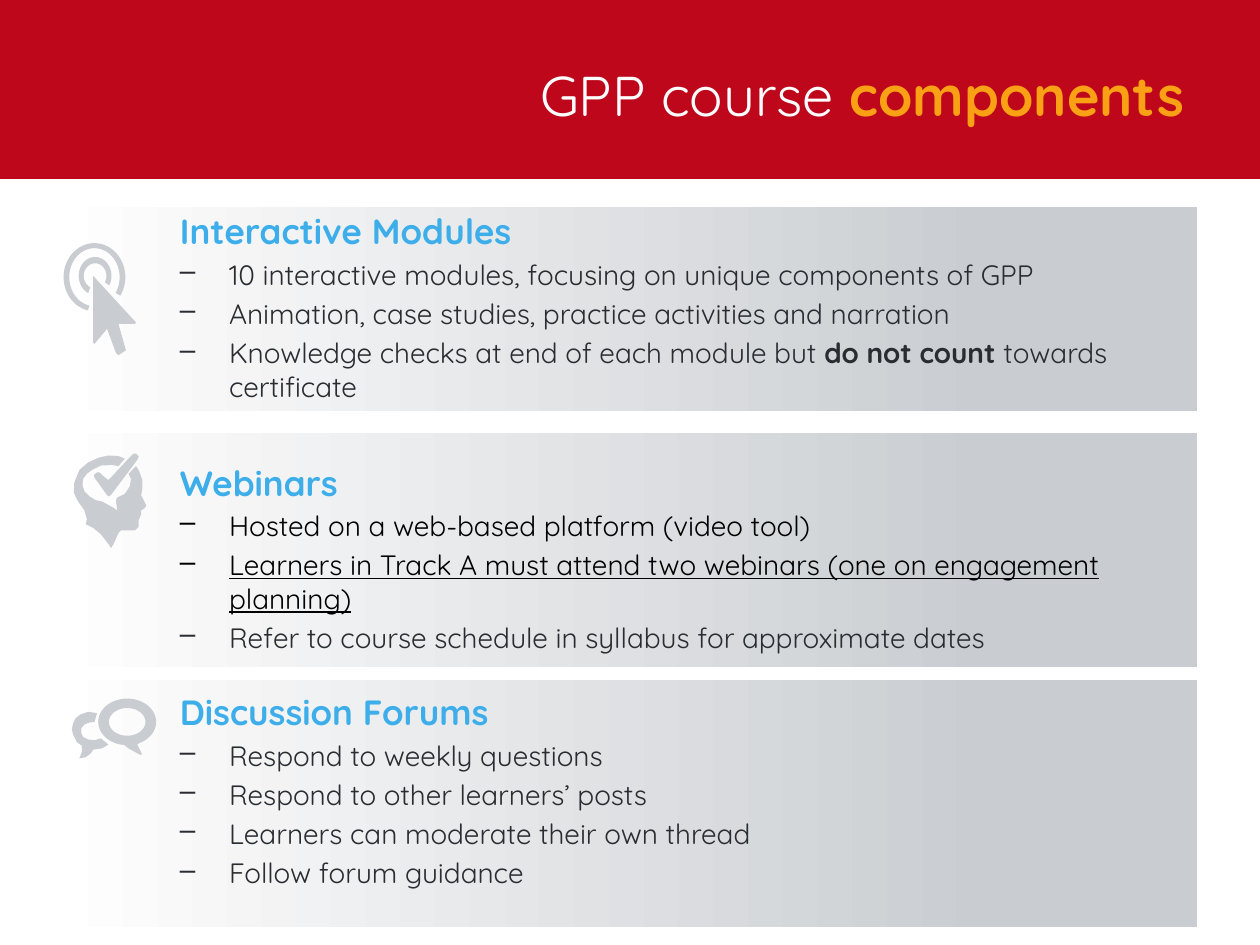
from math import cos, radians, sin

from lxml import etree
from pptx import Presentation
from pptx.dml.color import RGBColor
from pptx.enum.shapes import MSO_SHAPE
from pptx.enum.text import MSO_ANCHOR, PP_ALIGN
from pptx.oxml.ns import qn
from pptx.util import Inches, Pt

RECT = MSO_SHAPE.RECTANGLE
MIDDLE = MSO_ANCHOR.MIDDLE
RIGHT = PP_ALIGN.RIGHT

THEME = {
    "font": "Quicksand",
    "red": RGBColor(0xBF, 0x07, 0x1C),
    "gold": RGBColor(0xFA, 0xA0, 0x14),
    "blue": RGBColor(0x3D, 0xAE, 0xEA),
    "grey": RGBColor(0xC9, 0xCD, 0xD1),
    "ink": RGBColor(0x29, 0x2C, 0x30),
    "black": RGBColor(0, 0, 0),
    "white": RGBColor(255, 255, 255),
    "title": Pt(32),
    "head": Pt(20),
    "body": Pt(16),
}

deck = Presentation()
deck.slide_width, deck.slide_height = Inches(10), Inches(7.5)
UNIT = deck.slide_width // 1000  # the slide is a grid of 1000 columns, 750 rows
slide = deck.slides.add_slide(deck.slide_layouts[5])
shapes = slide.shapes


def arc(mid, radius, start, stop):
    """Points on an ellipse, clockwise from start to stop in degrees."""
    steps = 48
    turns = [radians(start + (stop - start) * i / steps) for i in range(steps + 1)]
    return [(mid[0] + radius[0] * cos(t), mid[1] + radius[1] * sin(t)) for t in turns]


def draw(*loops):
    """One grey outline made of closed loops of grid points."""
    loops = [[(x * UNIT, y * UNIT) for x, y in loop] for loop in loops]
    pen = shapes.build_freeform(*loops[0][0], scale=1.0)
    for i, loop in enumerate(loops):
        if i:
            pen.move_to(*loop[0])
        pen.add_line_segments(loop[1:], close=True)
    icon = pen.convert_to_shape()
    icon.shadow.inherit = False
    icon.fill.solid()
    icon.fill.fore_color.rgb = THEME["grey"]
    icon.line.fill.background()


# Header
band = shapes.add_shape(RECT, 0, 0, deck.slide_width, 142 * UNIT)
band.shadow.inherit = False
band.fill.solid()
band.fill.fore_color.rgb = THEME["red"]
band.line.fill.background()

title = shapes.title
title.element.getparent().append(title.element)
title.left, title.top, title.width, title.height = (
    n * UNIT for n in (50, 25, 900, 100))
title.text_frame.vertical_anchor = MIDDLE
para = title.text_frame.paragraphs[0]
para.alignment = RIGHT
para.font.name, para.font.size = THEME["font"], THEME["title"]
for words, color, bold in (("GPP course ", "white", False),
                           ("components", "gold", True)):
    run = para.add_run()
    run.text = words
    run.font.color.rgb = THEME[color]
    run.font.bold = bold

# Sections: bar top and height, text top and height, heading, bullets.
# A bullet is a list of (words, style) with the colour of the paragraph.
SECTIONS = [
    ((164, 162), (162, 162), "Interactive Modules", [
        ("ink", [("10 interactive modules, focusing on unique components of GPP", "")]),
        ("ink", [("Animation, case studies, practice activities and narration", "")]),
        ("ink", [("Knowledge checks at end of each module but ", ""),
                 ("do not count ", "bold"), ("towards certificate", "")]),
    ]),
    ((344, 185), (353, 179), "Webinars", [
        ("black", [("Hosted on a web-based platform (video tool)", "")]),
        ("black", [("Learners in Track A must attend two webinars "
                    "(one on engagement planning)", "line")]),
        ("ink", [("Refer to course schedule in syllabus for approximate dates", "")]),
    ]),
    ((540, 196), (550, 154), "Discussion Forums", [
        ("ink", [("Respond to weekly questions", "")]),
        ("ink", [("Respond to other learners’ posts", "")]),
        ("ink", [("Learners can moderate their own thread", "")]),
        ("ink", [("Follow forum guidance", "")]),
    ]),
]

for (top, high), (text_top, text_high), head, items in SECTIONS:
    bar = shapes.add_shape(RECT, 42 * UNIT, top * UNIT, 908 * UNIT, high * UNIT)
    bar.shadow.inherit = False
    bar.line.fill.background()
    bar.fill.gradient()
    bar.fill.gradient_angle = 0
    for stop, place, color in zip(bar.fill.gradient_stops, (0, 0.82),
                                  ("white", "grey")):
        stop.position = place
        stop.color.rgb = THEME[color]

    box = shapes.add_textbox(133 * UNIT, text_top * UNIT, 800 * UNIT, text_high * UNIT)
    frame = box.text_frame
    frame.word_wrap = True
    frame.vertical_anchor = MIDDLE
    para = frame.paragraphs[0]
    para.text = head
    para.space_before = Pt(4)
    para.font.name, para.font.size = THEME["font"], THEME["head"]
    para.font.bold = True
    para.font.color.rgb = THEME["blue"]

    for color, parts in items:
        para = frame.add_paragraph()
        para.level = 1
        para.space_before = Pt(3.2)
        para.font.name, para.font.size = THEME["font"], THEME["body"]
        para.font.color.rgb = THEME[color]
        for words, style in parts:
            run = para.add_run()
            run.text = words
            if style == "bold":
                run.font.bold = True
            elif style == "line":
                run.font.underline = True
        props = para._p.get_or_add_pPr()
        props.set("marL", str(39 * UNIT))
        props.set("indent", str(-39 * UNIT))
        mark = etree.Element(qn("a:buChar"), char="–")
        props.find(qn("a:defRPr")).addprevious(mark)

# Pointer with two click rings
draw([(74, 219), (108, 256), (107, 257), (94, 257), (100, 278),
      (94, 282), (92, 280), (85, 261), (75, 273), (74, 272)])
draw(arc((75, 220), (24.5, 27), 102, 393)
     + arc((75, 220), (20, 23), 393, 102))
draw(arc((75.5, 219), (13, 15), 115, 390)
     + arc((75.5, 219), (9, 10), 390, 115))

# Head with a check mark
draw([(86, 381), (89, 378), (104, 362), (106, 360), (108, 360), (110, 362),
      (110, 363), (109, 365), (88, 393), (86.5, 394), (85, 393), (75, 379),
      (74.5, 377), (77, 375), (79, 375), (81, 377)])
draw([(116, 401), (112, 393), (113, 388), (113, 381), (110, 373), (108, 370),
      (102, 376), (104, 380), (103, 386), (99, 392), (93, 395), (92, 397),
      (93, 405), (90, 403), (81, 398), (76, 397), (71, 394), (67, 390),
      (65.5, 385), (66, 380), (69, 376), (73, 373), (80, 369.5), (89, 369),
      (94, 370), (99, 364), (94, 362), (86, 361.5), (79, 363), (70, 367),
      (63, 373), (59, 383), (58.5, 391), (62, 398), (67, 405), (69, 412),
      (68, 416), (74, 419), (80, 424), (87, 433), (88, 435), (90, 432),
      (94, 423), (96, 421), (107, 421), (110, 418), (110, 413), (112, 408),
      (112, 405), (114, 404), (116, 402)])

# Speech bubbles
draw(arc((101, 573), (23, 18.5), 100, 425)
     + [(109, 591), (113, 599), (111, 599), (102, 594), (98, 591)],
     arc((101, 573), (14.5, 11), 360, 0))
draw([(77, 566), (75, 573), (71, 573.5), (67, 575), (64.5, 578), (64.5, 582),
      (66, 585), (70, 587), (75, 587.5), (80, 586), (86, 591), (81, 594),
      (74, 595), (72, 598), (68, 601), (63, 602), (65, 597), (65, 592),
      (61, 589), (58, 583), (57, 579), (58, 574), (60, 570), (64, 567),
      (70, 565)])

deck.save("out.pptx")
